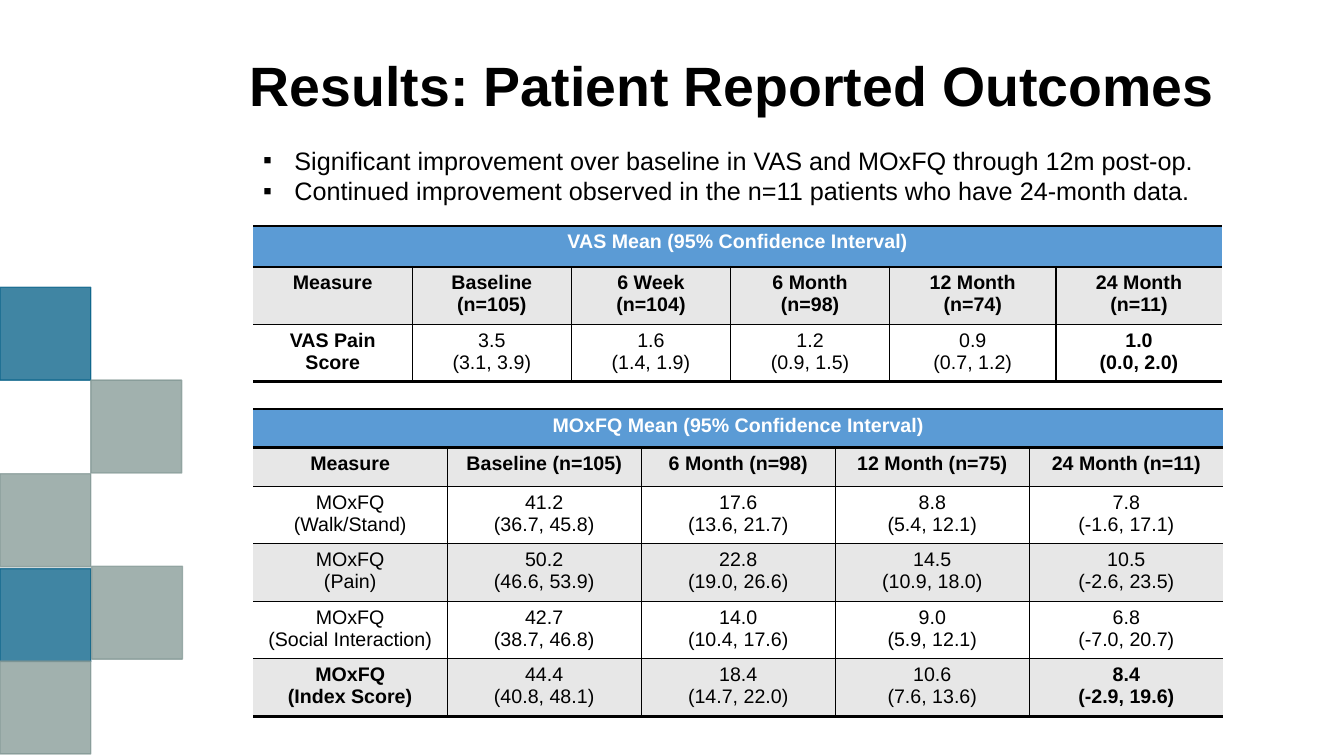
from lxml import etree
from pptx import Presentation
from pptx.dml.color import RGBColor
from pptx.enum.shapes import MSO_SHAPE as SHAPE
from pptx.enum.text import MSO_ANCHOR as ANCHOR, PP_ALIGN as ALIGN
from pptx.oxml.ns import qn
from pptx.util import Cm, Pt

COLORS = {"black": "000000", "white": "FFFFFF", "teal": "005D85",
          "sage": "829794", "blue": "5B9BD5", "gray": "E7E7E7"}


def rgb(name):
    return RGBColor.from_string(COLORS[name])


def sub(parent, tag, **attrs):
    return etree.SubElement(parent, qn(tag), attrs)


class ResultsSlide:
    font = "Arial"
    cell_size = 14

    def __init__(self, prs):
        self.s = prs.slides.add_slide(prs.slide_layouts[6])

    def style(self, p, size, color="black", bold=False):
        p.font.name, p.font.size, p.font.bold = self.font, Pt(size), bold
        p.font.color.rgb = rgb(color)

    def square(self, x, y, color):
        """Add a decorative square at 75 % opacity."""
        sp = self.s.shapes.add_shape(SHAPE.RECTANGLE, Cm(x), Cm(y), Cm(2.29), Cm(2.34))
        sp.shadow.inherit = False
        sp.fill.solid()
        sp.fill.fore_color.rgb = rgb(color)
        sp.line.color.rgb = rgb(color)
        sp.line.width = Pt(1)
        for clr in sp.fill._xPr.iter(qn("a:srgbClr")):
            sub(clr, "a:alpha", val="75000")

    def text_frame(self, x, y, w, h):
        tf = self.s.shapes.add_textbox(Cm(x), Cm(y), Cm(w), Cm(h)).text_frame
        tf.word_wrap = True
        return tf

    def title(self, text):
        tf = self.text_frame(6.05, 0.94, 25.5, 2.59)
        tf.vertical_anchor = ANCHOR.MIDDLE
        p = tf.paragraphs[0]
        p.text, p.line_spacing = text, 0.9
        self.style(p, 39.6, bold=True)

    def bullets(self, lines):
        tf = self.text_frame(6.38, 3.53, 24.21, 1.8)
        tf.text = "\n".join(lines)
        for p in tf.paragraphs:
            pPr = p._p.get_or_add_pPr()
            pPr.set("marL", str(Cm(0.79)))
            pPr.set("indent", str(-Cm(0.79)))
            sub(pPr, "a:buFont", typeface=self.font)
            sub(pPr, "a:buChar", char="▪")
            self.style(p, 18)

    def borders(self, cell, widths):
        """Set left, right, top and bottom line widths in points; 0 means no line."""
        tcPr = cell._tc.get_or_add_tcPr()
        for side, width in zip("LRTB", widths):
            ln = sub(tcPr, f"a:ln{side}", w=str(Pt(width)))
            if width:
                sub(sub(ln, "a:solidFill"), "a:srgbClr", val=COLORS["black"])
            else:
                sub(ln, "a:noFill")

    def table(self, y, col_widths, row_heights, heading, rows, bold_cells):
        """Add a table with a merged heading row and shaded alternate rows."""
        n_rows, n_cols = len(row_heights), len(col_widths)
        t = self.s.shapes.add_table(n_rows, n_cols, Cm(6.38), Cm(y), Cm(sum(col_widths)),
                                    Cm(sum(row_heights))).table
        t.first_row = t.horz_banding = False
        for col, w in zip(t.columns, col_widths):
            col.width = Cm(w)
        for row, h in zip(t.rows, row_heights):
            row.height = Cm(h)
        t.cell(0, 0).merge(t.cell(0, n_cols - 1))
        for i, texts in enumerate([[heading] + [""] * (n_cols - 1)] + rows):
            top = 2 if i < 2 else 1
            bottom = 2 if i in (0, n_rows - 1) else 1
            fill = "blue" if i == 0 else "gray" if i % 2 else "white"
            for j, text in enumerate(texts):
                cell = t.cell(i, j)
                left = int(i > 0 and j > 0)
                right = int(i > 0 and j < n_cols - 1)
                self.borders(cell, (left, right, top, bottom))
                cell.fill.solid()
                cell.fill.fore_color.rgb = rgb(fill)
                cell.text_frame.text = text
                for p in cell.text_frame.paragraphs:
                    p.alignment = ALIGN.CENTER
                    self.style(p, self.cell_size, "black" if i else "white",
                               i < 2 or (i, j) in bold_cells)


VAS_ROWS = [
    ["Measure", "Baseline (n=105)", "6 Week\n(n=104)", "6 Month\n(n=98)",
     "12 Month\n(n=74)", "24 Month\n(n=11)"],
    ["VAS Pain Score", "3.5\n(3.1, 3.9)", "1.6\n(1.4, 1.9)", "1.2\n(0.9, 1.5)",
     "0.9\n(0.7, 1.2)", "1.0\n(0.0, 2.0)"],
]
MOXFQ_ROWS = [
    ["Measure", "Baseline (n=105)", "6 Month (n=98)", "12 Month (n=75)", "24 Month (n=11)"],
    ["MOxFQ\n(Walk/Stand)", "41.2\n(36.7, 45.8)", "17.6\n(13.6, 21.7)",
     "8.8\n(5.4, 12.1)", "7.8\n(-1.6, 17.1)"],
    ["MOxFQ\n(Pain)", "50.2\n(46.6, 53.9)", "22.8\n(19.0, 26.6)",
     "14.5\n(10.9, 18.0)", "10.5\n(-2.6, 23.5)"],
    ["MOxFQ\n(Social Interaction)", "42.7\n(38.7, 46.8)", "14.0\n(10.4, 17.6)",
     "9.0\n(5.9, 12.1)", "6.8\n(-7.0, 20.7)"],
    ["MOxFQ\n(Index Score)", "44.4\n(40.8, 48.1)", "18.4\n(14.7, 22.0)",
     "10.6\n(7.6, 13.6)", "8.4\n(-2.9, 19.6)"],
]
SQUARES = [(0, 7.24, "teal"), (0, 14.33, "teal"), (0, 16.66, "sage"),
           (2.29, 9.58, "sage"), (2.31, 14.27, "sage"), (0, 11.94, "sage")]


def main():
    prs = Presentation()
    prs.slide_width, prs.slide_height = Cm(33.87), Cm(19.05)
    slide = ResultsSlide(prs)
    for square in SQUARES:
        slide.square(*square)
    slide.title("Results: Patient Reported Outcomes")
    slide.table(5.69, [4.01] * 4 + [4.19] * 2, [1.04, 1.36, 1.36],
                "VAS Mean (95% Confidence Interval)", VAS_ROWS, {(2, 0), (2, 5)})
    slide.bullets([
        "Significant improvement over baseline in VAS and MOxFQ through 12m post-op.",
        "Continued improvement observed in the n=11 patients who have 24-month data."])
    slide.table(10.31, [4.89] * 5, [0.97] * 2 + [1.45] * 4,
                "MOxFQ Mean (95% Confidence Interval)", MOXFQ_ROWS, {(5, 0), (5, 4)})
    prs.save("out.pptx")


if __name__ == "__main__":
    main()
